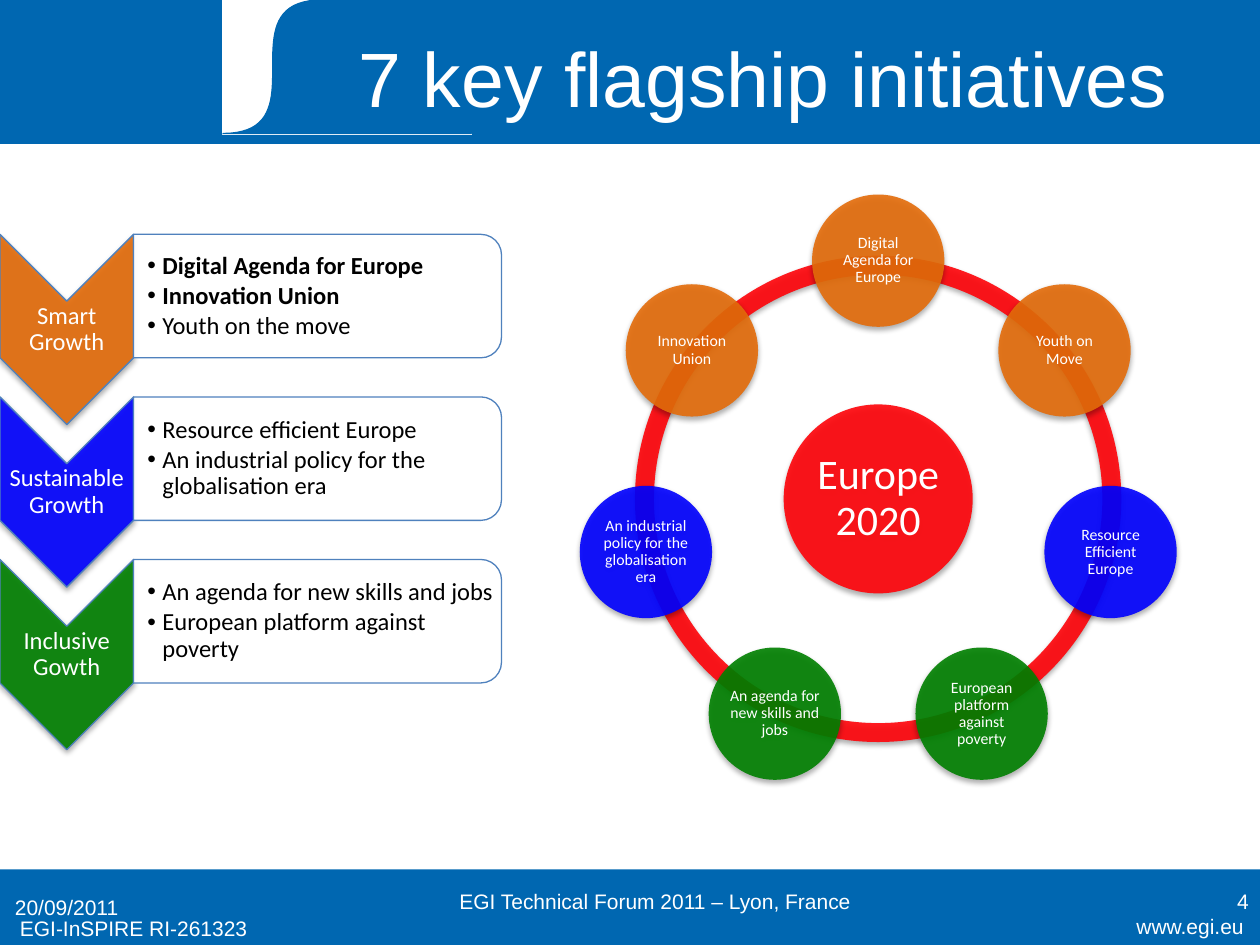
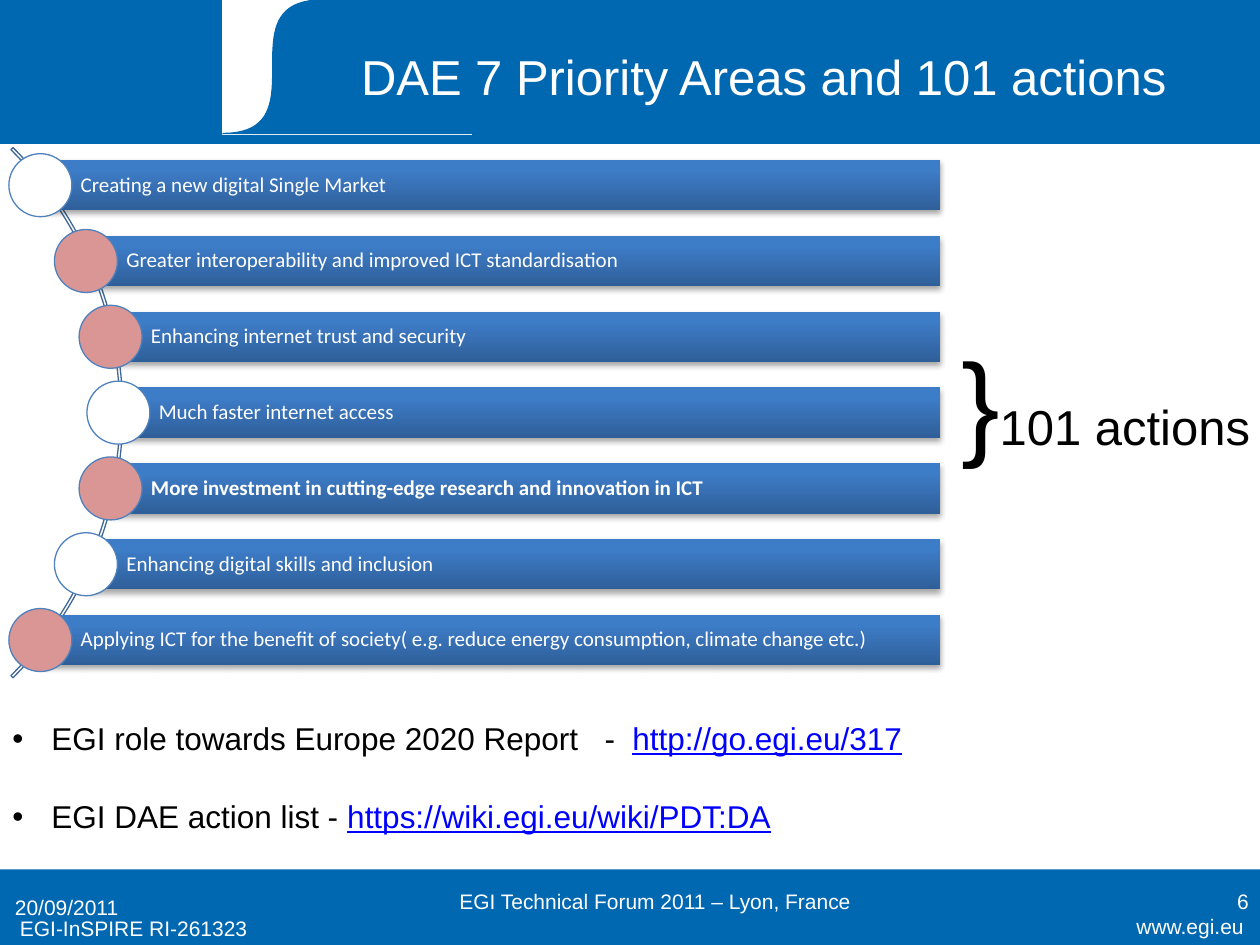
import math
from dataclasses import dataclass

import lxml.etree
import pptx
import pptx.dml.color
import pptx.enum.shapes
import pptx.enum.text
import pptx.oxml.ns
import pptx.util

RGBColor = pptx.dml.color.RGBColor
SHAPES = pptx.enum.shapes.MSO_SHAPE
ALIGN = pptx.enum.text.PP_ALIGN
ANCHOR = pptx.enum.text.MSO_ANCHOR
qn = pptx.oxml.ns.qn

# The slide is a grid of 10 columns by 7.5 rows
COLUMNS, ROWS = 10, 7.5
CELL = pptx.util.Inches(1)

BAND_BLUE = RGBColor(0x00, 0x67, 0xB1)
WHITE = RGBColor(0xFF, 0xFF, 0xFF)
BLACK = RGBColor(0x00, 0x00, 0x00)
RED = RGBColor(0xFF, 0x03, 0x09)
ORANGE = RGBColor(0xE4, 0x6C, 0x0A)
BLUE = RGBColor(0x00, 0x00, 0xFF)
GREEN = RGBColor(0x00, 0x80, 0x00)
PINK = RGBColor(0xD9, 0x96, 0x94)
OUTLINE = RGBColor(0x4F, 0x81, 0xBD)
ARC_LINE = RGBColor(0x3F, 0x67, 0x97)
BAR_DARK = RGBColor(0x2F, 0x5F, 0x99)
BAR_LIGHT = RGBColor(0x3D, 0x7C, 0xC7)

HEADING_FONT, DIAGRAM_FONT = "Arial", "Calibri"

GROWTH_AREAS = [
    ("Smart Growth", ORANGE,
     [("Digital Agenda for Europe", True), ("Innovation Union", True), ("Youth on the move", False)]),
    ("Sustainable Growth", BLUE,
     [("Resource efficient Europe", False), ("An industrial policy for the globalisation era", False)]),
    ("Inclusive Gowth", GREEN,
     [("An agenda for new skills and jobs", False), ("European platform against poverty", False)]),
]
INITIATIVES = [
    ("Digital Agenda for Europe", ORANGE),
    ("Youth on Move", ORANGE),
    ("Resource Efficient Europe", BLUE),
    ("European platform against poverty", GREEN),
    ("An agenda for new skills and jobs", GREEN),
    ("An industrial policy for the globalisation era", BLUE),
    ("Innovation Union", ORANGE),
]
PRIORITIES = [
    ("Creating a new digital Single Market", WHITE, False),
    ("Greater interoperability and improved ICT standardisation", PINK, False),
    ("Enhancing internet trust and security", PINK, False),
    ("Much faster internet access", WHITE, False),
    ("More investment in cutting-edge research and innovation in ICT", PINK, True),
    ("Enhancing digital skills and inclusion", WHITE, False),
    ("Applying ICT for the benefit of society( e.g. reduce energy consumption, climate change etc.)", PINK, False),
]
LINKS = [
    ("EGI role towards Europe 2020 Report\t-\t", "http://go.egi.eu/317"),
    ("EGI DAE action list - ", "https://wiki.egi.eu/wiki/PDT:DA"),
]


@dataclass
class Box:
    """A region of the slide, in grid cells."""
    left: float
    top: float
    width: float
    height: float

    def emu(self):
        return [round(length * CELL) for length in (self.left, self.top, self.width, self.height)]

    def inner(self, left, top, width, height):
        return Box(self.left + left, self.top + top, width, height)

    def turned(self):
        """The frame that covers this box once rotated by a quarter turn."""
        shift = (self.width - self.height) / 2
        return self.inner(shift, -shift, self.height, self.width)


def around(x, y, size):
    return Box(x - size / 2, y - size / 2, size, size)


# Shared helpers
def add_shadow(shape):
    effects = shape.element.spPr.find(qn("a:effectLst"))
    shadow = lxml.etree.SubElement(effects, qn("a:outerShdw"), blurRad="40000", dist="23000",
                                   dir="5400000", rotWithShape="0")
    color = lxml.etree.SubElement(shadow, qn("a:srgbClr"), val="000000")
    lxml.etree.SubElement(color, qn("a:alpha"), val="35000")


def style_shape(shape, fill=None, line=None, translucent=False, shadow=False):
    shape.shadow.inherit = False
    if fill is None:
        shape.fill.background()
    else:
        shape.fill.solid()
        shape.fill.fore_color.rgb = fill
    if translucent:
        color = shape.element.spPr.find(qn("a:solidFill")).find(qn("a:srgbClr"))
        lxml.etree.SubElement(color, qn("a:alpha"), val="90000")
    if line is None:
        shape.line.fill.background()
    else:
        shape.line.color.rgb = line
        shape.line.width = pptx.util.Pt(0.75)
    if shadow:
        add_shadow(shape)


def draw(slide, kind, box, **style):
    shape = slide.shapes.add_shape(kind, *box.emu())
    style_shape(shape, **style)
    return shape


def set_frame(frame, anchor=ANCHOR.MIDDLE, margins=(0.1, 0.05, 0.1, 0.05)):
    frame.word_wrap = True
    frame.auto_size = pptx.enum.text.MSO_AUTO_SIZE.NONE
    frame.vertical_anchor = anchor
    (frame.margin_left, frame.margin_top,
     frame.margin_right, frame.margin_bottom) = map(pptx.util.Inches, margins)
    return frame


def set_font(font, size, color=WHITE, name=HEADING_FONT, bold=False):
    font.size, font.name, font.bold = pptx.util.Pt(size), name, bold
    font.color.rgb = color


def write(frame, text, size, align=ALIGN.LEFT, spacing=None, **font):
    paragraph = frame.paragraphs[0]
    paragraph.text = text
    paragraph.alignment = align
    paragraph.line_spacing = spacing
    set_font(paragraph.font, size, **font)


def add_text_frame(slide, box, **frame):
    return set_frame(slide.shapes.add_textbox(*box.emu()).text_frame, **frame)


def next_paragraph(frame, index):
    return frame.add_paragraph() if index else frame.paragraphs[0]


def add_bullet(paragraph, hang, tabs=()):
    properties = paragraph._p.get_or_add_pPr()
    indent = round(hang * CELL)
    properties.set("marL", str(indent))
    properties.set("indent", str(-indent))
    lxml.etree.SubElement(properties, qn("a:buFont"), typeface="Arial")
    lxml.etree.SubElement(properties, qn("a:buChar"), char="•")
    if tabs:
        tab_list = lxml.etree.SubElement(properties, qn("a:tabLst"))
        for position in tabs:
            lxml.etree.SubElement(tab_list, qn("a:tab"), pos=str(round(position * CELL)), algn="l")


# Elements on every slide
def draw_header(slide, box, title, size):
    draw(slide, SHAPES.RECTANGLE, box, fill=BAND_BLUE, line=BAND_BLUE)
    tab = box.inner(1.77, 0, 1.97, 1.07)
    draw(slide, SHAPES.RECTANGLE, tab, fill=WHITE, line=WHITE)

    # Blue field with an S-shaped left edge, just short of the tab's lower rim
    right, bottom, bend = tab.left + tab.width, tab.top + tab.height - 0.01, 0.79
    outline = [(right, tab.top), (right, bottom)]
    for step in range(41):
        t = step / 40
        x = bend * (3 * t * (1 - t) ** 2 + t ** 3)
        y = (1 - t) ** 3 + 3 * t * (1 - t) ** 2
        outline.append((tab.left + x, tab.top + y * (bottom - tab.top)))
    points = [(round(x * CELL), round(y * CELL)) for x, y in outline]
    builder = slide.shapes.build_freeform(*points[0])
    builder.add_line_segments(points[1:], close=True)
    style_shape(builder.convert_to_shape(), fill=BAND_BLUE, line=BAND_BLUE)

    # Title placeholder, brought in front of the band
    placeholder = slide.shapes.title
    placeholder.left, placeholder.top, placeholder.width, placeholder.height = (
        box.inner(2.32, 0.13, 7.48, 0.95).emu())
    write(set_frame(placeholder.text_frame), title, size, ALIGN.CENTER)
    placeholder.element.getparent().append(placeholder.element)


def draw_footer(slide, box, number):
    draw(slide, SHAPES.RECTANGLE, box, fill=BAND_BLUE)
    for text, place, align in [
        ("20/09/2011", (0.02, 0, 2.33, 0.6), ALIGN.LEFT),
        ("EGI-InSPIRE RI-261323", (0.06, 0.32, 2.5, 0.3), ALIGN.LEFT),
        ("EGI Technical Forum 2011 – Lyon, France", (3.19, 0.05, 4.02, 0.4), ALIGN.CENTER),
        (str(number), (7.68, 0.05, 2.33, 0.4), ALIGN.RIGHT),
        ("www.egi.eu", (8.39, 0.3, 1.58, 0.3), ALIGN.RIGHT),
    ]:
        write(add_text_frame(slide, box.inner(*place)), text, 12, align)


def add_slide(presentation, title, size, number):
    slide = presentation.slides.add_slide(presentation.slide_layouts[5])
    draw_header(slide, Box(0, 0, COLUMNS, 1.14), title, size)
    draw_footer(slide, Box(0, ROWS - 0.6, COLUMNS, 0.6), number)
    return slide


# Flagship initiatives
def draw_growth_list(slide, box):
    arrow_width, arrow_height, panel_height = 1.06, 1.51, 0.98
    pitch = (box.height - arrow_height) / (len(GROWTH_AREAS) - 1)
    for row, (name, color, items) in enumerate(GROWTH_AREAS):
        top = row * pitch
        arrow = draw(slide, SHAPES.CHEVRON, box.inner(0, top, arrow_width, arrow_height).turned(),
                     fill=color, line=OUTLINE, translucent=True, shadow=True)
        panel_box = box.inner(arrow_width, top, box.width - arrow_width, panel_height)
        panel = draw(slide, SHAPES.ROUND_2_SAME_RECTANGLE, panel_box.turned(),
                     fill=WHITE, line=OUTLINE, translucent=True)
        arrow.rotation = panel.rotation = 90

        label = add_text_frame(slide, box.inner(0, top + 0.53, arrow_width, 0.45), margins=(0.01,) * 4)
        write(label, name, 14, ALIGN.CENTER, 0.9, name=DIAGRAM_FONT)
        frame = add_text_frame(slide, panel_box.inner(0, 0.05, 2.87, 0.88),
                               margins=(0.11, 0.01, 0.01, 0.01))
        for index, (item, bold) in enumerate(items):
            paragraph = next_paragraph(frame, index)
            paragraph.text = item
            add_bullet(paragraph, 0.12)
            paragraph.line_spacing = 0.9
            paragraph.space_after = pptx.util.Pt(2)
            set_font(paragraph.font, 14, BLACK, DIAGRAM_FONT, bold)


def draw_initiative_ring(slide, box):
    center_x, center_y = box.left + box.width / 2, box.top + box.height / 2
    step = 360 / len(INITIATIVES)
    angles = [270 + index * step for index in range(len(INITIATIVES))]
    for angle in angles:
        arc = draw(slide, SHAPES.BLOCK_ARC, box, fill=RED, translucent=True, shadow=True)
        # Angles are stored in units of 0.6 per degree
        arc.adjustments[0] = angle % 360 * 0.6
        arc.adjustments[1] = (angle + step) % 360 * 0.6
        arc.adjustments[2] = 0.039

    def draw_disc(x, y, diameter, text, size, color):
        disc = draw(slide, SHAPES.OVAL, around(x, y, diameter),
                    fill=color, translucent=True, shadow=True)
        frame = set_frame(disc.text_frame, margins=(0.01,) * 4)
        write(frame, text, size, ALIGN.CENTER, 0.9, name=DIAGRAM_FONT)

    draw_disc(center_x, center_y, 1.5, "Europe 2020", 24, RED)
    orbit = 0.49 * box.width
    for angle, (name, color) in zip(map(math.radians, angles), INITIATIVES):
        draw_disc(center_x + orbit * math.cos(angle), center_y + orbit * math.sin(angle),
                  1.05, name, 9, color)


# Priority areas
def draw_priority_list(slide, box):
    arc_size, arc_x, radius = 5.95, box.left - 2, 2.94
    middle = box.top + box.height / 2
    arc = draw(slide, SHAPES.BLOCK_ARC, around(arc_x, middle, arc_size), line=ARC_LINE)
    for index, value in enumerate((189, 27, 0.004)):
        arc.adjustments[index] = value

    bar_height = 0.4
    pitch = (box.height - bar_height) / (len(PRIORITIES) - 1)
    for row, (name, color, bold) in enumerate(PRIORITIES):
        y = box.top + bar_height / 2 + row * pitch
        x = arc_x + math.sqrt(radius ** 2 - (y - middle) ** 2)
        bar = draw(slide, SHAPES.RECTANGLE,
                   Box(x, y - bar_height / 2, box.left + box.width - x, bar_height), shadow=True)
        bar.fill.gradient()
        bar.fill.gradient_angle = 90
        for stop, position, shade in zip(bar.fill.gradient_stops, (0, 0.8), (BAR_DARK, BAR_LIGHT)):
            stop.position, stop.color.rgb = position, shade
        frame = set_frame(bar.text_frame, margins=(0.32, 0.03, 0.03, 0.03))
        write(frame, name, 12, spacing=0.9, name=DIAGRAM_FONT, bold=bold)
        draw(slide, SHAPES.OVAL, around(x, y, 0.5), fill=color, line=OUTLINE)


def draw_action_count(slide, box):
    frame = add_text_frame(slide, box, anchor=ANCHOR.TOP, margins=(0.1, 0.05, 0, 0.05))
    for text, size in [("}", 66), ("101 actions", 28)]:
        run = frame.paragraphs[0].add_run()
        run.text = text
        set_font(run.font, size, BLACK)


def draw_links(slide, box):
    frame = add_text_frame(slide, box, anchor=ANCHOR.TOP)
    for index, (label, address) in enumerate(LINKS):
        paragraph = next_paragraph(frame, index)
        add_bullet(paragraph, 0.31, tabs=(4.7, 4.92))
        if index:
            paragraph.space_before = pptx.util.Pt(23)
        for text, color in [(label, BLACK), (address, BLUE)]:
            run = paragraph.add_run()
            run.text = text
            set_font(run.font, 18, color)
            run.font.underline = color == BLUE


def main():
    presentation = pptx.Presentation()
    presentation.slide_width, presentation.slide_height = COLUMNS * CELL, round(ROWS * CELL)

    flagship = add_slide(presentation, "7 key flagship initiatives", 44, 4)
    draw_initiative_ring(flagship, Box(5.04, 2.03, 3.86, 3.86))
    draw_growth_list(flagship, Box(0, 1.86, 3.98, 4.09))

    priorities = add_slide(presentation, "DAE 7 Priority Areas and 101 actions", 28, 6)
    draw_priority_list(priorities, Box(0, 1.27, 7.46, 4.01))
    draw_action_count(priorities, Box(7.53, 2.57, 2.47, 1.21))
    draw_links(priorities, Box(0, 5.66, 7.83, 1.1))

    presentation.save("out.pptx")


if __name__ == "__main__":
    main()
